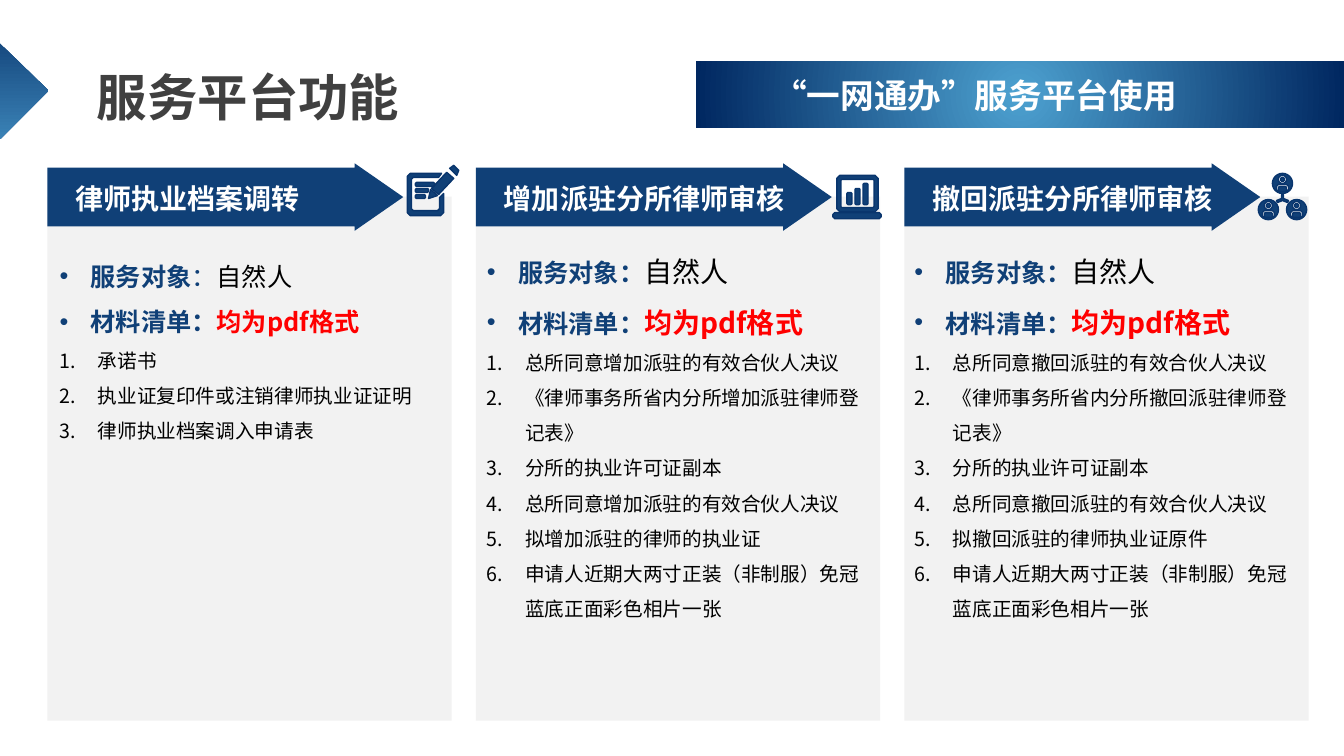
import math

import pptx
import pptx.dml.color
import pptx.enum.shapes
import pptx.enum.text
import pptx.oxml
import pptx.oxml.ns
import pptx.util
from pptx.util import Inches

FONT = "Noto Sans CJK SC"
NAVY, EDGE, PANEL, WHITE = "104077", "09356D", "F2F2F2", "FFFFFF"
BLACK, RED, GREY = "000000", "FF0000", "404040"
SKY, MIDNIGHT = "4DA1D0", "002760"
PRESET = pptx.enum.shapes.MSO_SHAPE
PHOTO = "申请人近期大两寸正装（非制服）免冠蓝底正面彩色相片一张"
PITCH = 4.25


def color(value):
    """Turn a hex string into an RGB colour."""
    return pptx.dml.color.RGBColor.from_string(value)


def element(tag, **attributes):
    """Make one DrawingML element."""
    node = pptx.oxml.parse_xml(f"<{tag} {pptx.oxml.ns.nsdecls('a')}/>")
    for key, value in attributes.items():
        node.set(key, value)
    return node


def paint(shape, fill, line=None):
    """Set the fill and line of a shape and drop its shadow."""
    shape.shadow.inherit = False
    shape.fill.solid()
    shape.fill.fore_color.rgb = color(fill)
    if line:
        shape.line.color.rgb = color(line)
        shape.line.width = pptx.util.Pt(1)
    else:
        shape.line.fill.background()
    return shape


def add_preset(slide, preset, box, fill):
    """Add a painted preset shape in a box given in inches."""
    return paint(slide.shapes.add_shape(preset, *map(Inches, box)), fill)


def add_outline(slide, left, top, contours, line=None):
    """Add one shape of closed contours, offset from left and top."""
    builder = None
    for contour in contours:
        corners = [(Inches(left + x), Inches(top + y)) for x, y in contour]
        if builder is None:
            builder = slide.shapes.build_freeform(*corners[0], scale=1.0)
        else:
            builder.move_to(*corners[0])
        builder.add_line_segments(corners[1:], close=True)
    return paint(builder.convert_to_shape(), NAVY, line)


def block(x, y, width, height, cut=0.01):
    """Give the contour of a rectangle with cut corners."""
    right, bottom = x + width, y + height
    return [(x + cut, y), (right - cut, y), (right, y + cut), (right, bottom - cut),
            (right - cut, bottom), (x + cut, bottom), (x, bottom - cut), (x, y + cut)]


def disc(x, y, radius, steps=24):
    """Give the contour of a circle around a centre."""
    angles = [2 * math.pi * step / steps for step in range(steps)]
    return [(x + radius * math.cos(angle), y + radius * math.sin(angle)) for angle in angles]


def set_gradient(shape, first, last):
    """Fill a shape with a two-colour gradient and return its XML."""
    shape.fill.gradient()
    for stop, value in zip(shape.fill.gradient_stops, (first, last)):
        stop.color.rgb = color(value)
    return shape._element.spPr.find(pptx.oxml.ns.qn("a:gradFill"))


def add_run(paragraph, text, size, value, bold=False):
    """Append one formatted run to a paragraph."""
    run = paragraph.add_run()
    run.text = text
    run.font.size = pptx.util.Pt(size)
    run.font.bold = bold
    run.font.color.rgb = color(value)
    run.font.name = FONT
    run.font._element.append(element("a:ea", typeface=FONT))


def place_text(holder, box, wrap=True):
    """Move a text holder to its box and prepare its frame."""
    holder.left, holder.top, holder.width, holder.height = map(Inches, box)
    frame = holder.text_frame
    frame.word_wrap = wrap
    frame.auto_size = pptx.enum.text.MSO_AUTO_SIZE.NONE
    frame.vertical_anchor = pptx.enum.text.MSO_ANCHOR.TOP
    return frame


def add_label(slide, box, text, size, align, wrap=True):
    """Add a bold white one-line label."""
    label = slide.shapes.add_textbox(*map(Inches, box))
    paragraph = place_text(label, box, wrap).paragraphs[0]
    paragraph.alignment = align
    add_run(paragraph, text, size, WHITE, True)


def add_heading(slide):
    """Place the slide title, the left marker and the banner."""
    banner = add_preset(slide, PRESET.RECTANGLE, (6.9, 0.61, 6.43, 0.66), NAVY)
    gradient = set_gradient(banner, SKY, MIDNIGHT)
    gradient.remove(gradient.find(pptx.oxml.ns.qn("a:lin")))
    focus = element("a:path", path="circle")
    focus.append(element("a:fillToRect", l="50000", t="50000", r="50000", b="50000"))
    gradient.append(focus)
    marker = add_outline(slide, 0, 0.43, [[(0, 0), (0.48, 0.47), (0, 0.95)]])
    set_gradient(marker, "174A80", "3A82B6")
    marker.fill.gradient_angle = 270
    title = place_text(slide.shapes.title, (0.86, 0.49, 5.9, 0.77)).paragraphs[0]
    title.alignment = pptx.enum.text.PP_ALIGN.LEFT
    title.line_spacing = 1.2
    add_run(title, "服务平台功能", 36, GREY, True)
    add_label(slide, (7.55, 0.69, 4.24, 0.5), "“一网通办”服务平台使用", 24,
              pptx.enum.text.PP_ALIGN.CENTER, False)


def add_item(frame, indent, marker, runs):
    """Add one list item with a hanging marker."""
    first = frame.paragraphs[0]
    paragraph = frame.add_paragraph() if first.runs else first
    properties = paragraph._p.get_or_add_pPr()
    properties.set("marL", str(Inches(indent)))
    properties.set("indent", str(-Inches(indent)))
    properties.append(element("a:buFont", typeface="Arial" if marker == "•" else FONT))
    if marker == "•":
        properties.append(element("a:buChar", char=marker))
    else:
        properties.append(element("a:buAutoNum", type=marker))
    paragraph.alignment = pptx.enum.text.PP_ALIGN.LEFT
    paragraph.line_spacing = 1.5
    paragraph.space_before = pptx.util.Pt(0)
    for run in runs:
        add_run(paragraph, *run)


def add_column(slide, body, left, heading, list_offset, accent, colon_bold, materials):
    """Build one service column: panel, arrow, heading and list."""
    add_preset(slide, PRESET.RECTANGLE, (left, 1.95, 4.01, 5.2), PANEL)
    arrow = add_preset(slide, PRESET.RIGHT_ARROW, (left, 1.62, 3.53, 0.67), NAVY)
    arrow.adjustments[0], arrow.adjustments[1] = 0.87, 0.72
    add_label(slide, (left + 0.18, 1.75, 3, 0.44), heading, 20, pptx.enum.text.PP_ALIGN.LEFT)
    slide.shapes._spTree.append(body._element)
    frame = place_text(body, (left + list_offset[0], list_offset[1], 4, 3.94))
    add_item(frame, 0.31, "•", [("服务对象", 18, NAVY, True), ("：", 18, NAVY, colon_bold),
                                ("自然人", accent, BLACK)])
    add_item(frame, 0.31, "•", [("材料清单：", 18, NAVY, True), ("均为pdf格式", accent, RED, True)])
    for material in materials:
        add_item(frame, 0.38, "arabicPeriod", [(material, 14, BLACK)])


def add_notepad(slide, left, top):
    """Draw a notepad with a pen."""
    page = [(0.03, 0.08), (0.34, 0.08), (0.31, 0.12), (0.06, 0.12), (0.04, 0.14), (0.04, 0.43),
            (0.06, 0.45), (0.3, 0.45), (0.32, 0.43), (0.32, 0.32), (0.36, 0.28), (0.36, 0.47),
            (0.33, 0.5), (0.03, 0.5), (0, 0.47), (0, 0.11)]
    pen = [(0.39, 0.07), (0.46, 0.13), (0.31, 0.29), (0.24, 0.23)]
    cap = [(0.46, 0), (0.51, 0.05), (0.49, 0.1), (0.42, 0.03)]
    tip = [(0.23, 0.24), (0.3, 0.3), (0.21, 0.33)]
    lines = [block(0.08, 0.17 + 0.06 * row, width, 0.04)
             for row, width in enumerate((0.19, 0.13, 0.1))]
    add_outline(slide, left, top, [page, pen, cap, tip] + lines, EDGE)


def add_laptop(slide, left, top):
    """Draw a laptop showing a bar chart."""
    bars = [block(0.14 + 0.08 * index, 0.29 - height, 0.05, height)
            for index, height in enumerate((0.12, 0.16, 0.21))]
    add_outline(slide, left, top, [block(0.04, 0, 0.41, 0.36, 0.03), block(0.08, 0.04, 0.33, 0.28),
                                   block(0, 0.37, 0.48, 0.06, 0.02)] + bars, EDGE)


def add_network(slide, left, top):
    """Draw three linked people."""
    contours = [[(0.23, 0.21), (0.25, 0.21), (0.25, 0.25), (0.3, 0.27), (0.29, 0.29),
                 (0.24, 0.27), (0.19, 0.29), (0.18, 0.27), (0.23, 0.25)]]
    for x, y in ((0.24, 0.1), (0.1, 0.36), (0.38, 0.36)):
        contours += [disc(x, y, 0.1), disc(x, y - 0.04, 0.04), disc(x, y - 0.04, 0.02),
                     block(x - 0.06, y + 0.01, 0.12, 0.07, 0.02),
                     block(x - 0.04, y + 0.03, 0.08, 0.05)]
    add_outline(slide, left, top, contours, EDGE)


def branch_materials(action, certificate):
    """List the materials for adding or withdrawing a branch lawyer."""
    resolution = f"总所同意{action}派驻的有效合伙人决议"
    return [resolution, f"《律师事务所省内分所{action}派驻律师登记表》",
            "分所的执业许可证副本", resolution, certificate, PHOTO]


def main():
    """Build and save the slide."""
    deck = pptx.Presentation()
    deck.slide_width, deck.slide_height = Inches(13.33), Inches(7.5)
    slide = deck.slides.add_slide(deck.slide_layouts.get_by_name("Comparison"))
    bodies = [holder for holder in slide.placeholders if holder.placeholder_format.idx in (1, 2, 4)]
    for holder in list(slide.placeholders):
        if holder.placeholder_format.idx not in (0, 1, 2, 4):
            slide.shapes._spTree.remove(holder._element)
    add_heading(slide)
    columns = [
        ("律师执业档案调转", (0.02, 2.39), 18, False,
         ["承诺书", "执业证复印件或注销律师执业证证明", "律师执业档案调入申请表"]),
        ("增加派驻分所律师审核", (0.01, 2.31), 20, True,
         branch_materials("增加", "拟增加派驻的律师的执业证")),
        ("撤回派驻分所律师审核", (0, 2.31), 20, True,
         branch_materials("撤回", "拟撤回派驻的律师执业证原件")),
    ]
    for index, (body, column) in enumerate(zip(bodies, columns)):
        add_column(slide, body, 0.47 + PITCH * index, *column)
    add_notepad(slide, 4.04, 1.64)
    add_laptop(slide, 8.26, 1.74)
    add_network(slide, 12.48, 1.72)
    deck.save("out.pptx")


if __name__ == "__main__":
    main()
